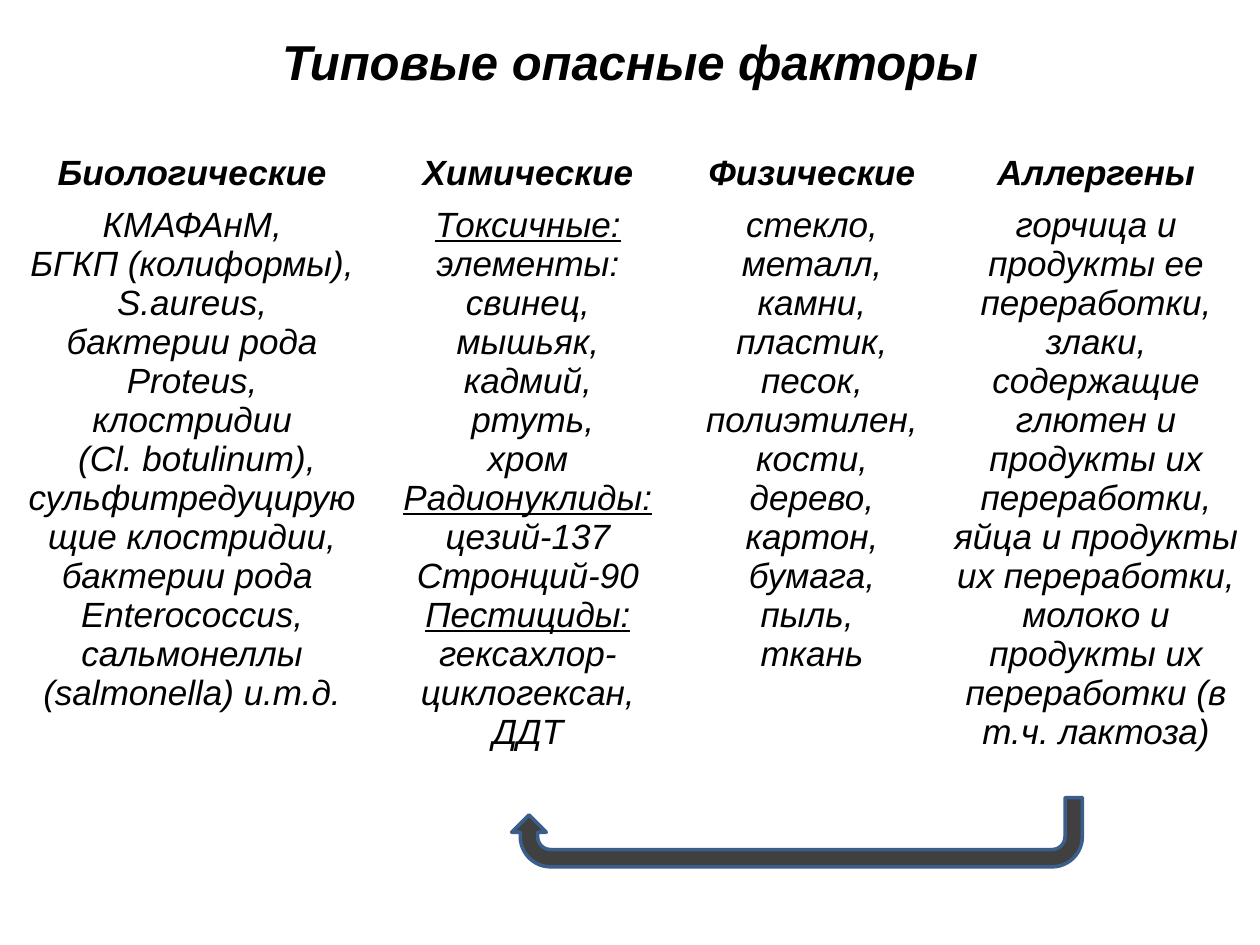
"""Build a slide that lists typical food hazards in four columns."""
from pptx import Presentation
from pptx.dml.color import RGBColor
from pptx.enum.shapes import MSO_SHAPE
from pptx.enum.text import MSO_ANCHOR, PP_ALIGN
from pptx.util import Inches, Pt

HUES = {"text": "000000", "paper": "FFFFFF", "arrow": "404040", "edge": "3A5F8C"}
WIDE, HIGH = Inches(10), Inches(7.5)
LEFT, TOP, ROW = 0.09, 1.17, 0.41
COLS = [2.87, 2.46, 2.05, 2.46]
MARK = "_"

HAZARDS = {
    "Биологические": [
        "КМАФАнМ,", "БГКП (колиформы),", "S.aureus,", "бактерии рода Proteus,",
        "клостридии", " (Cl. botulinum),", "сульфитредуцирующие клостридии,",
        "бактерии рода ", "Enterococcus,", "сальмонеллы", "(salmonella) и.т.д.",
    ],
    "Химические": [
        "_Токсичные: |элементы:", "свинец,", "мышьяк,", "кадмий,", " ртуть,", "хром",
        "_Радионуклиды:", "цезий-137", "Стронций-90",
        "_Пестициды:", "гексахлор-циклогексан,", "ДДТ",
    ],
    "Физические": [
        "стекло,", "металл,", "камни,", "пластик,", "песок,", "полиэтилен,",
        "кости,", "дерево,", "картон,", "бумага,", "пыль, ", "ткань",
    ],
    "Аллергены": [
        "горчица и продукты ее переработки,",
        "злаки, содержащие глютен и продукты их переработки,",
        "яйца и продукты их переработки,",
        "молоко и продукты их переработки (в т.ч. лактоза)",
    ],
}


def tint(name):
    return RGBColor.from_string(HUES[name])


def write(frame, lines, size, bold):
    for num, line in enumerate(lines):
        para = frame.add_paragraph() if num else frame.paragraphs[0]
        para.alignment = PP_ALIGN.CENTER
        for part in line.split("|"):
            run = para.add_run()
            run.text = part.removeprefix(MARK)
            font = run.font
            font.name, font.size = "Arial", Pt(size)
            font.bold, font.italic = bold, True
            font.underline = part.startswith(MARK)
            font.color.rgb = tint("text")


deck = Presentation()
deck.slide_width, deck.slide_height = WIDE, HIGH
slide = deck.slides.add_slide(deck.slide_layouts[5])

title = slide.shapes.title
title.left, title.top = int(WIDE * 0.05), Inches(0.16)
title.width, title.height = int(WIDE * 0.9), Inches(0.64)
title.text_frame.vertical_anchor = MSO_ANCHOR.MIDDLE
write(title.text_frame, ["Типовые опасные факторы"], 28, True)

table = slide.shapes.add_table(
    2, len(COLS), Inches(LEFT), Inches(TOP), Inches(sum(COLS)), Inches(2 * ROW)
).table
table.first_row = table.horz_banding = False
for row in table.rows:
    row.height = Inches(ROW)
for col, (head, items) in enumerate(HAZARDS.items()):
    table.columns[col].width = Inches(COLS[col])
    for row, lines in enumerate([[head], items]):
        cell = table.cell(row, col)
        cell.fill.solid()
        cell.fill.fore_color.rgb = tint("paper")
        write(cell.text_frame, lines, 20, row == 0)

arrow = slide.shapes.add_shape(
    MSO_SHAPE.U_TURN_ARROW, Inches(4.06), Inches(6.33), Inches(4.53), Inches(0.55)
)
arrow.rotation = 180
arrow.shadow.inherit = False
arrow.fill.solid()
arrow.fill.fore_color.rgb = tint("arrow")
arrow.line.color.rgb = tint("edge")
arrow.line.width = Pt(2)

deck.save("out.pptx")
